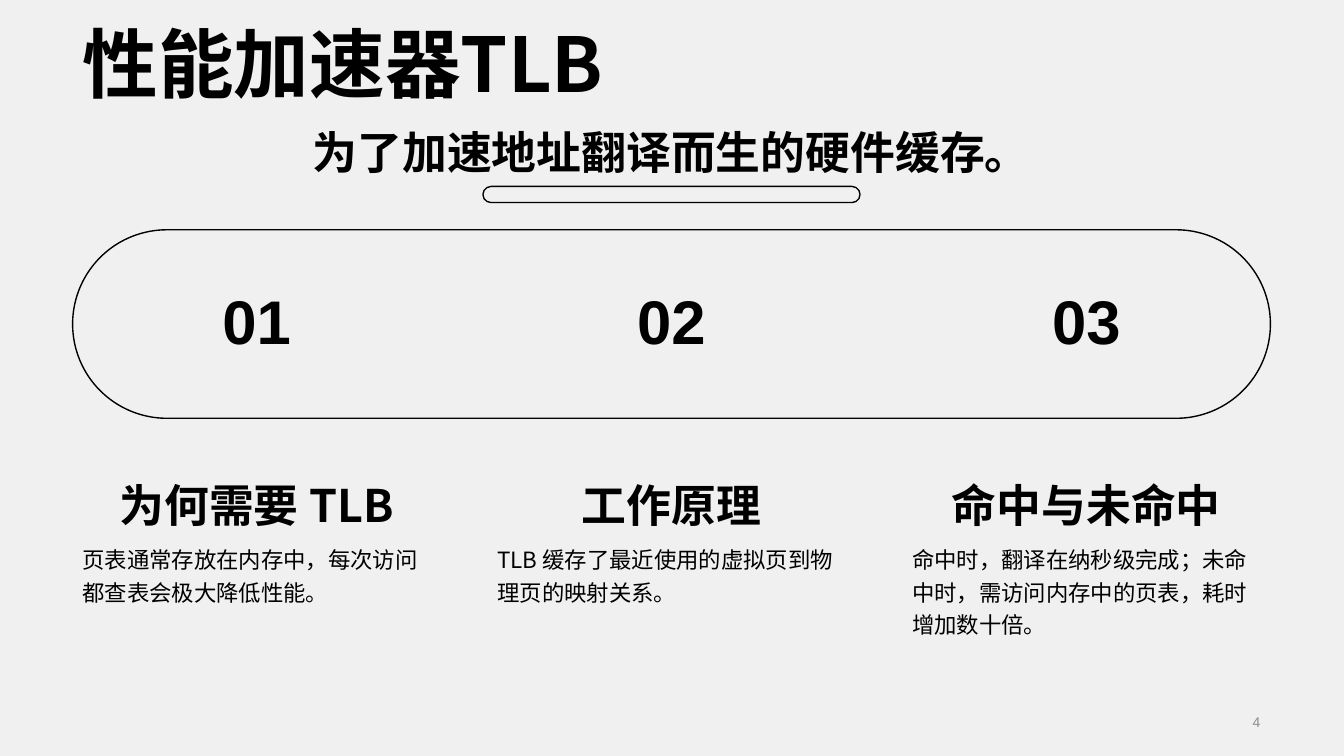
from lxml import etree
from pptx import Presentation
from pptx.dml.color import RGBColor
from pptx.enum.shapes import MSO_SHAPE
from pptx.enum.text import MSO_ANCHOR, MSO_AUTO_SIZE, PP_ALIGN
from pptx.oxml.ns import qn
from pptx.util import Inches, Pt

ROUNDED = MSO_SHAPE.ROUNDED_RECTANGLE
TOP, MIDDLE, BOTTOM = MSO_ANCHOR.TOP, MSO_ANCHOR.MIDDLE, MSO_ANCHOR.BOTTOM
LEFT, CENTER, RIGHT = PP_ALIGN.LEFT, PP_ALIGN.CENTER, PP_ALIGN.RIGHT
NO_AUTOFIT = MSO_AUTO_SIZE.NONE

BLACK = RGBColor(0x00, 0x00, 0x00)
GRAY = RGBColor(0x8C, 0x8C, 0x8C)
BACKGROUND = RGBColor(0xF0, 0xF0, 0xF0)
CJK_FONT = "Noto Sans CJK SC"
LATIN_FONT = "Arial"

MARGIN, CONTENT_WIDTH = 0.72, 11.88
COLUMN_WIDTH, NUMBER_WIDTH = 3.65, 2.11
COLUMN_STEP = (CONTENT_WIDTH - COLUMN_WIDTH) / 2

TOPICS = [
    ("为何需要 TLB", "页表通常存放在内存中，每次访问都查表会极大降低性能。"),
    ("工作原理", "TLB 缓存了最近使用的虚拟页到物理页的映射关系。"),
    ("命中与未命中",
     "命中时，翻译在纳秒级完成；未命中时，需访问内存中的页表，耗时增加数十倍。"),
]


def write_text(frame, text, size, font_name=CJK_FONT, bold=False, color=BLACK,
               align=LEFT, anchor=MIDDLE, wrap=True, line_spacing=1.0):
    frame.word_wrap = wrap
    frame.auto_size = NO_AUTOFIT
    frame.vertical_anchor = anchor
    paragraph = frame.paragraphs[0]
    paragraph.text = text
    paragraph.alignment = align
    paragraph.line_spacing = line_spacing
    font = paragraph.font
    font.name, font.size, font.bold = font_name, Pt(size), bold
    font.color.rgb = color
    # East Asian characters take their own typeface
    defaults = paragraph._p.pPr.find(qn("a:defRPr"))
    etree.SubElement(defaults, qn("a:ea"), typeface=font_name)


def add_text(slide, left, top, width, height, text, size, **style):
    box = slide.shapes.add_textbox(
        Inches(left), Inches(top), Inches(width), Inches(height))
    write_text(box.text_frame, text, size, **style)


def add_pill(slide, left, top, width, height):
    pill = slide.shapes.add_shape(
        ROUNDED, Inches(left), Inches(top), Inches(width), Inches(height))
    pill.adjustments[0] = 0.5
    pill.shadow.inherit = False
    pill.fill.background()
    pill.line.color.rgb = BLACK
    pill.line.width = Pt(1)


def add_title(slide, text):
    title = slide.shapes.title
    title.left, title.top = Inches(MARGIN), Inches(0.14)
    title.width, title.height = Inches(CONTENT_WIDTH), Inches(0.98)
    write_text(title.text_frame, text, 54, bold=True, anchor=BOTTOM)


def add_topic(slide, index, heading, description):
    left = MARGIN + index * COLUMN_STEP
    number_left = left + (COLUMN_WIDTH - NUMBER_WIDTH) / 2
    add_text(slide, left, 4.47, COLUMN_WIDTH, 0.85, heading, 32,
             bold=True, align=CENTER, anchor=BOTTOM)
    add_text(slide, left, 5.32, COLUMN_WIDTH, 1.39, description, 16,
             anchor=TOP, line_spacing=1.2)
    add_text(slide, number_left, 2.66, NUMBER_WIDTH, 1.02, f"{index + 1:02}", 44,
             font_name=LATIN_FONT, bold=True, align=CENTER, wrap=False)


def main():
    prs = Presentation()
    prs.slide_width, prs.slide_height = Inches(13.33), Inches(7.5)
    slide = prs.slides.add_slide(prs.slide_layouts[5])
    slide.background.fill.solid()
    slide.background.fill.fore_color.rgb = BACKGROUND

    # Title and subtitle
    add_title(slide, "性能加速器TLB")
    add_text(slide, MARGIN, 1.24, CONTENT_WIDTH, 0.53,
             "为了加速地址翻译而生的硬件缓存。", 32, bold=True, align=CENTER)

    # Underline bar and number band
    add_pill(slide, 4.79, 1.85, 3.74, 0.16)
    add_pill(slide, MARGIN, 2.28, CONTENT_WIDTH, 1.87)

    # Three topics
    for index, (heading, description) in enumerate(TOPICS):
        add_topic(slide, index, heading, description)

    # Page number
    add_text(slide, 8.6, 7.01, 4, 0.3, "4", 10,
             font_name=LATIN_FONT, color=GRAY, align=RIGHT)

    prs.save("out.pptx")


if __name__ == "__main__":
    main()
